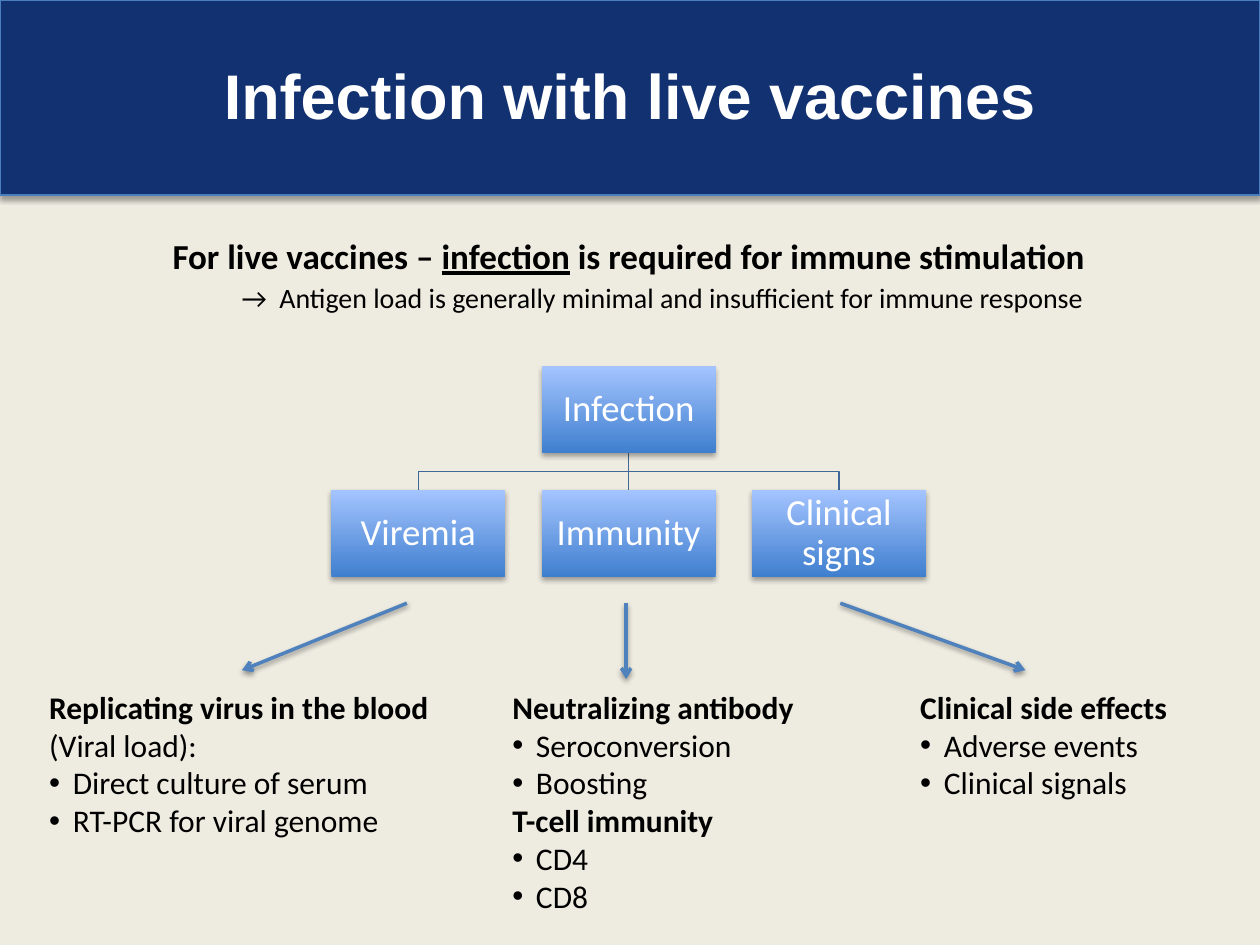
from lxml.etree import SubElement
from pptx import Presentation
from pptx.dml.color import RGBColor
from pptx.enum.shapes import MSO_CONNECTOR as Link, MSO_SHAPE as Shape
from pptx.enum.text import MSO_ANCHOR as Anchor, PP_ALIGN as Align
from pptx.oxml.ns import qn
from pptx.util import Pt

NAVY, NAVY_EDGE, CREAM = "113171", "4B7EBC", "EEECE1"
BOX_DARK, BOX_LIGHT, BRANCH, ARROW = "3F7FCE", "A4C4FF", "3F6797", "4F81BD"
WHITE, BLACK = "FFFFFF", "000000"


def rgb(value):
    return RGBColor.from_string(value)


class Sketch:
    def __init__(self, slide, font="Calibri"):
        self.slide, self.font = slide, font
        self.shapes = slide.shapes
        slide.background.fill.solid()
        slide.background.fill.fore_color.rgb = rgb(CREAM)

    def effects(self, item, opacity=0, distance=1.8):
        effects = SubElement(item._element.spPr, qn("a:effectLst"))
        if opacity:
            shadow = SubElement(effects, qn("a:outerShdw"), blurRad=str(Pt(3.1)),
                                dist=str(Pt(distance)), dir="5400000", rotWithShape="0")
            color = SubElement(shadow, qn("a:srgbClr"), val=BLACK)
            SubElement(color, qn("a:alpha"), val=str(opacity * 1000))

    def stroke(self, item, color, width):
        item.line.color.rgb = rgb(color)
        item.line.width = Pt(width)

    def words(self, paragraph, text, size, color=BLACK, font=None, **style):
        run = paragraph.add_run()
        run.text = text
        run.font.color.rgb = rgb(color)
        values = {"size": Pt(size), "name": font or self.font, **style}
        for name, value in values.items():
            setattr(run.font, name, value)

    def text(self, left, top, width, height, **frame_style):
        frame = self.shapes.add_textbox(*map(Pt, (left, top, width, height))).text_frame
        for name, value in {"word_wrap": False, **frame_style}.items():
            setattr(frame, name, value)
        return frame

    def bullet(self, paragraph, indent=13.5):
        props = paragraph._p.get_or_add_pPr()
        props.set("marL", str(Pt(indent)))
        props.set("indent", str(-Pt(indent)))
        SubElement(props, qn("a:buFont"), typeface="Arial")
        SubElement(props, qn("a:buChar"), char="•")

    def findings(self, left, width, lines):
        frame = self.text(left, 389.5, width, 22 * len(lines) + 7)
        for number, (kind, text) in enumerate(lines):
            paragraph = frame.add_paragraph() if number else frame.paragraphs[0]
            if kind == "bullet":
                self.bullet(paragraph)
            self.words(paragraph, text, 18, bold=kind == "heading")

    def banner(self, width, height):
        band = self.shapes.add_shape(Shape.RECTANGLE, 0, 0, Pt(width), Pt(height))
        band.fill.solid()
        band.fill.fore_color.rgb = rgb(NAVY)
        self.stroke(band, NAVY_EDGE, 0.75)
        self.effects(band, 35)

    def box(self, left, top, width, height, lines):
        box = self.shapes.add_shape(Shape.RECTANGLE, *map(Pt, (left, top, width, height)))
        box.fill.gradient()
        box.fill.gradient_angle = 90
        for stop, color in zip(box.fill.gradient_stops, (BOX_DARK, BOX_LIGHT)):
            stop.color.rgb = rgb(color)
        box.line.fill.background()
        self.effects(box, 35)
        frame = box.text_frame
        frame.word_wrap, frame.vertical_anchor = True, Anchor.MIDDLE
        for side in ("left", "right", "top", "bottom"):
            setattr(frame, f"margin_{side}", Pt(0.75))
        for number, line in enumerate(lines):
            paragraph = frame.add_paragraph() if number else frame.paragraphs[0]
            paragraph.alignment, paragraph.line_spacing = Align.CENTER, 0.9
            self.words(paragraph, line, 21, WHITE)
        return box

    def straight(self, start, end, color, width):
        line = self.shapes.add_connector(Link.STRAIGHT, *map(Pt, (*start, *end)))
        self.stroke(line, color, width)
        return line

    def arrow(self, start, end):
        line = self.straight(start, end, ARROW, 2)
        SubElement(line.line._get_or_add_ln(), qn("a:tailEnd"), type="arrow")
        self.effects(line, 38, 1.6)

    def elbow(self, start, end):
        middle = (start[1] + end[1]) / 2
        builder = self.shapes.build_freeform(Pt(start[0]), Pt(start[1]))
        corners = ((start[0], middle), (end[0], middle), end)
        builder.add_line_segments([(Pt(x), Pt(y)) for x, y in corners], close=False)
        branch = builder.convert_to_shape()
        branch.fill.background()
        self.stroke(branch, BRANCH, 0.75)
        self.effects(branch)


def main():
    deck = Presentation()
    deck.slide_width, deck.slide_height = Pt(720), Pt(540)
    sketch = Sketch(deck.slides.add_slide(deck.slide_layouts[6]))

    sketch.banner(720, 111.5)
    title = sketch.text(36, 9, 648, 90, word_wrap=True, vertical_anchor=Anchor.MIDDLE)
    title.paragraphs[0].alignment = Align.CENTER
    sketch.words(title.paragraphs[0], "Infection with live vaccines", 36, WHITE,
                 "Arial", bold=True)

    claim = sketch.text(90.5, 130.5, 542, 31.5).paragraphs[0]
    claim.alignment = Align.CENTER
    for text, underline in (("For live vaccines – ", False), ("infection", True),
                            (" is required for immune stimulation ", False)):
        sketch.words(claim, text, 20, bold=True, underline=underline)

    width, height, step = 99.4, 49.7, 120.2
    parent_top, child_top = 209.3, 280.1
    center = 359.2
    parent_exit = (center, parent_top + height)
    effects = (["Viremia"], ["Immunity"], ["Clinical", "signs"])
    centers = [center + step * offset for offset in (-1, 0, 1)]

    for outer in (centers[0], centers[2]):
        sketch.elbow(parent_exit, (outer, child_top))
    trunk = sketch.straight(parent_exit, (center, child_top), BRANCH, 0.75)
    sketch.effects(trunk)
    infection = sketch.box(center - width / 2, parent_top, width, height, ["Infection"])
    viremia, immunity, signs = [sketch.box(x - width / 2, child_top, width, height, lines)
                                for x, lines in zip(centers, effects)]
    trunk.begin_connect(infection, 2)
    trunk.end_connect(immunity, 0)

    sketch.findings(21, 234, [
        ("heading", "Replicating virus in the blood"), ("plain", "(Viral load):"),
        ("bullet", "Direct culture of serum"), ("bullet", "RT-PCR for viral genome")])
    sketch.findings(285.7, 176.5, [
        ("heading", "Neutralizing antibody"), ("bullet", "Seroconversion"),
        ("bullet", "Boosting"), ("heading", "T-cell immunity"),
        ("bullet", "CD4"), ("bullet", "CD8")])
    sketch.findings(518.8, 157.5, [
        ("heading", "Clinical side effects"), ("bullet", "Adverse events"),
        ("bullet", "Clinical signals")])

    for start, end in ((232.5, (138.3, 383)), (357.8, (357.8, 388)), (480.2, (586, 383))):
        sketch.arrow((start, 344.7), end)

    reason = sketch.text(131, 156.5, 501, 26.6).paragraphs[0]
    sketch.words(reason, "→  Antigen load is generally minimal and insufficient "
                 "for immune response", 16)

    deck.save("out.pptx")


if __name__ == "__main__":
    main()
